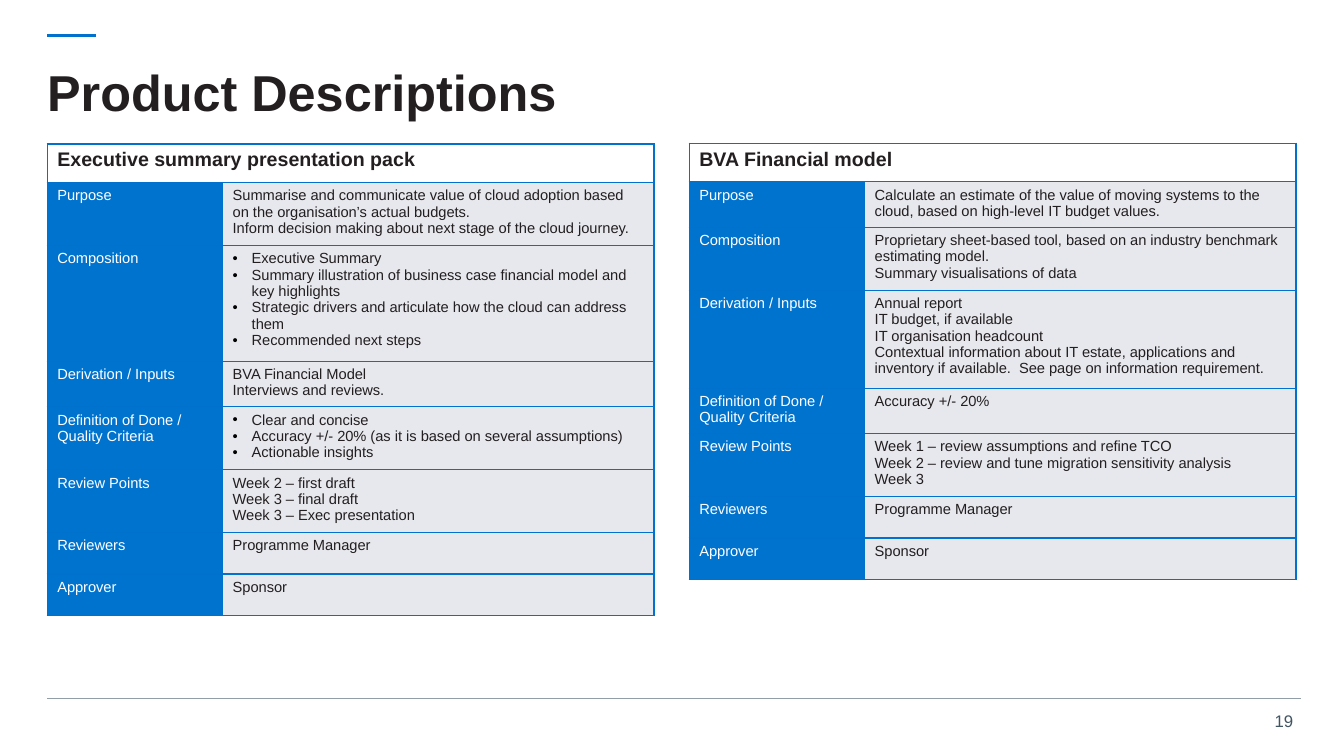
from lxml import etree
from pptx import Presentation
from pptx.dml.color import RGBColor
from pptx.enum.shapes import MSO_CONNECTOR
from pptx.enum.text import MSO_ANCHOR, PP_ALIGN
from pptx.oxml.ns import qn
from pptx.util import Cm, Pt

STRAIGHT = MSO_CONNECTOR.STRAIGHT
TOP, MIDDLE = MSO_ANCHOR.TOP, MSO_ANCHOR.MIDDLE
LEFT, RIGHT = PP_ALIGN.LEFT, PP_ALIGN.RIGHT

COLOURS = {
    "ink": "231F20", "white": "FFFFFF", "blue": "0072CE", "label": "0073CF",
    "body": "E7E8ED", "rule": "919EA8", "number": "425563", "bullet": "000000",
}
FORMATS = {
    "title": {"size": Pt(36), "bold": True},
    "heading": {"size": Pt(14), "bold": True},
    "cell": {"size": Pt(10.5), "bold": False},
    "number": {"size": Pt(12), "bold": False},
}
MARGIN = 1.19
COLUMNS = (4.42, 10.87)
HEADING_HEIGHT, ROW_HEIGHT = 0.97, 1.04
BULLET_INDENT = Cm(0.48)
LABELS = (
    "Purpose", "Composition", "Derivation / Inputs",
    "Definition of Done / Quality Criteria", "Review Points", "Reviewers", "Approver",
)
BULLETED = {"Executive summary presentation pack": ("Composition", LABELS[3])}
PRODUCTS = (
    (MARGIN, 3.63, "Executive summary presentation pack", (
        ("Summarise and communicate value of cloud adoption based on the organisation’s actual budgets.",
         "Inform decision making about next stage of the cloud journey."),
        ("Executive Summary",
         "Summary illustration of business case financial model and key highlights",
         "Strategic drivers and articulate how the cloud can address them",
         "Recommended next steps"),
        ("BVA Financial Model", "Interviews and reviews."),
        ("Clear and concise",
         "Accuracy +/- 20% (as it is based on several assumptions)",
         "Actionable insights"),
        ("Week 2 – first draft", "Week 3 – final draft", "Week 3 – Exec presentation"),
        ("Programme Manager",),
        ("Sponsor",),
    )),
    (17.37, 3.61, "BVA Financial model", (
        ("Calculate an estimate of the value of moving systems to the cloud, based on high-level IT budget values.",),
        ("Proprietary sheet-based tool, based on an industry benchmark estimating model.",
         "Summary visualisations of data"),
        ("Annual report", "IT budget, if available", "IT organisation headcount",
         "Contextual information about IT estate, applications and inventory if available.  "
         "See page on information requirement."),
        ("Accuracy +/- 20%",),
        ("Week 1 – review assumptions and refine TCO",
         "Week 2 – review and tune migration sensitivity analysis",
         "Week 3"),
        ("Programme Manager",),
        ("Sponsor",),
    )),
)


def colour(name):
    return RGBColor.from_string(COLOURS[name])


class ProductPage:
    def __init__(self, page, font="Arial"):
        self.page = page
        self.font = font

    def paragraphs(self, frame, lines, style, ink, align=LEFT, spacing=None, bulleted=False):
        for index, line in enumerate(lines):
            para = frame.paragraphs[0] if index == 0 else frame.add_paragraph()
            para.alignment = align
            if spacing:
                para.line_spacing = spacing
            if bulleted:
                self.bullet(para)
            span = para.add_run()
            span.text = line
            span.font.name = self.font
            span.font.color.rgb = colour(ink)
            for name, value in FORMATS[style].items():
                setattr(span.font, name, value)

    def bullet(self, para):
        properties = para._p.get_or_add_pPr()
        properties.set("marL", str(BULLET_INDENT))
        properties.set("indent", str(-BULLET_INDENT))
        tint = etree.SubElement(properties, qn("a:buClr"))
        etree.SubElement(tint, qn("a:srgbClr"), val=COLOURS["bullet"])
        etree.SubElement(properties, qn("a:buFont"), typeface=self.font)
        etree.SubElement(properties, qn("a:buChar"), char="•")

    def text(self, place, line, style, ink, insets=(0, 0), anchor=TOP, **layout):
        box = self.page.shapes.add_textbox(*map(Cm, place))
        frame = box.text_frame
        side, edge = map(Cm, insets)
        settings = {
            "word_wrap": True, "vertical_anchor": anchor,
            "margin_left": side, "margin_right": side,
            "margin_top": edge, "margin_bottom": edge,
        }
        for name, value in settings.items():
            setattr(frame, name, value)
        self.paragraphs(frame, [line], style, ink, **layout)

    def line(self, left, right, height, ink, width):
        rule = self.page.shapes.add_connector(STRAIGHT, Cm(left), Cm(height), Cm(right), Cm(height))
        rule.line.color.rgb = colour(ink)
        rule.line.width = Pt(width)
        etree.SubElement(rule._element.spPr, qn("a:effectLst"))

    def cell(self, cell, lines, fill, style, ink, bulleted=False):
        properties = cell._tc.get_or_add_tcPr()
        for side in ("a:lnL", "a:lnR", "a:lnT", "a:lnB"):
            border = etree.SubElement(properties, qn(side), w=str(Pt(1)))
            solid = etree.SubElement(border, qn("a:solidFill"))
            etree.SubElement(solid, qn("a:srgbClr"), val=COLOURS["blue"])
        cell.fill.solid()
        cell.fill.fore_color.rgb = colour(fill)
        self.paragraphs(cell.text_frame, lines, style, ink, bulleted=bulleted)

    def product(self, left, top, heading, details):
        height = HEADING_HEIGHT + ROW_HEIGHT * len(LABELS)
        table = self.page.shapes.add_table(
            len(LABELS) + 1, len(COLUMNS), Cm(left), Cm(top), Cm(sum(COLUMNS)), Cm(height)).table
        table.first_row = table.horz_banding = False
        for column, width in zip(table.columns, COLUMNS):
            column.width = Cm(width)
        for index, row in enumerate(table.rows):
            row.height = Cm(ROW_HEIGHT if index else HEADING_HEIGHT)
        table.cell(0, 0).merge(table.cell(0, 1))
        self.cell(table.cell(0, 0), [heading], "white", "heading", "ink")
        self.cell(table.cell(0, 1), [], "white", "heading", "ink")
        for index, (label, lines) in enumerate(zip(LABELS, details), 1):
            bulleted = label in BULLETED.get(heading, ())
            self.cell(table.cell(index, 0), [label], "label", "cell", "white")
            self.cell(table.cell(index, 1), lines, "body", "cell", "ink", bulleted)


def main():
    deck = Presentation()
    deck.slide_width, deck.slide_height = Cm(33.87), Cm(19.05)
    page = ProductPage(deck.slides.add_slide(deck.slide_layouts[6]))
    page.text((31.8, 17.78, 1.04, 0.76), "19", "number", "number", (0.25, 0.13), align=RIGHT)
    page.line(MARGIN, 2.41, 0.89, "blue", 2)
    page.line(MARGIN, 32.79, 17.6, "rule", 0.75)
    page.text((MARGIN, MARGIN, 31.67, 2.41), "Product Descriptions", "title", "ink",
              anchor=MIDDLE, spacing=0.9)
    for product in PRODUCTS:
        page.product(*product)
    deck.save("out.pptx")


if __name__ == "__main__":
    main()
